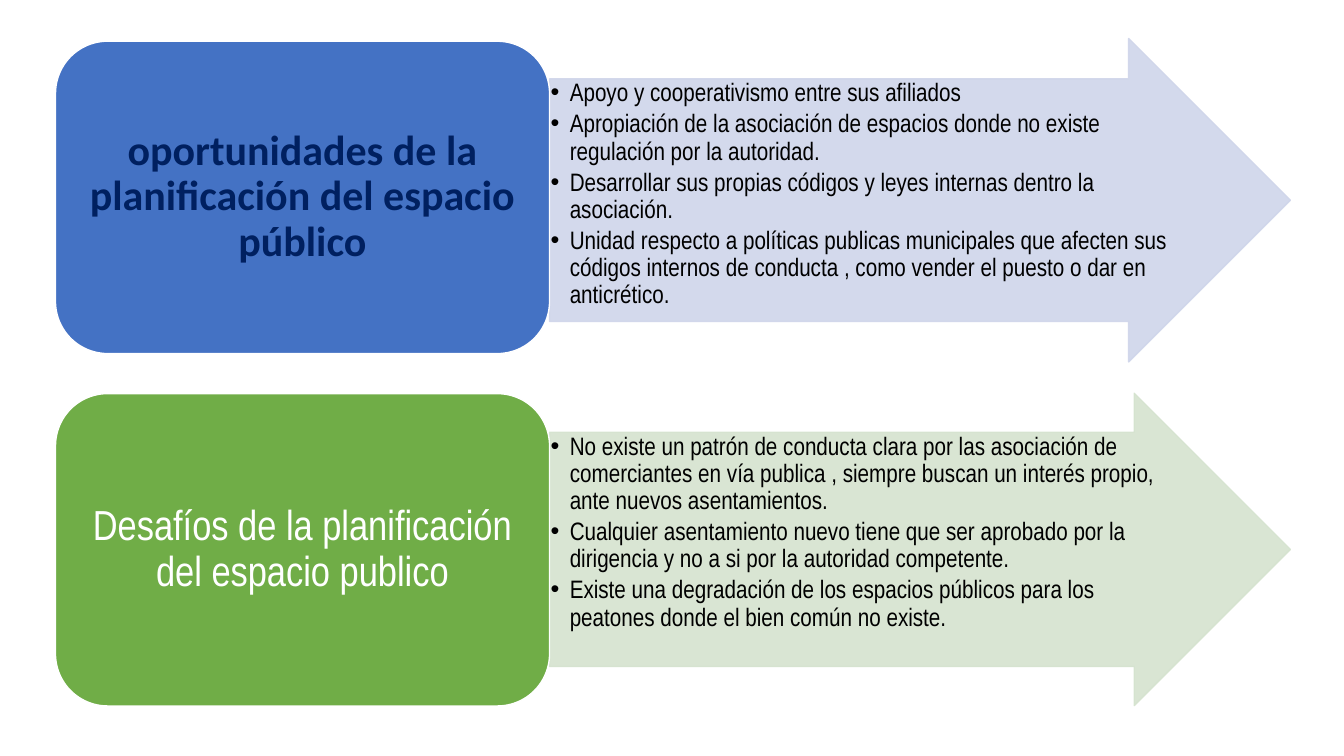
from dataclasses import dataclass

from lxml import etree
from pptx import Presentation
from pptx.dml.color import RGBColor
from pptx.enum.shapes import MSO_SHAPE
from pptx.enum.text import MSO_ANCHOR, PP_ALIGN
from pptx.oxml.ns import qn
from pptx.util import Cm, Pt

ARROW, ROUNDED = MSO_SHAPE.RIGHT_ARROW, MSO_SHAPE.ROUNDED_RECTANGLE
TOP, MIDDLE = MSO_ANCHOR.TOP, MSO_ANCHOR.MIDDLE
LEFT, CENTER = PP_ALIGN.LEFT, PP_ALIGN.CENTER


@dataclass(frozen=True)
class Theme:
    white: str = "FFFFFF"
    black: str = "000000"
    navy: str = "002060"
    blue: str = "4472C4"
    pale_blue: str = "CFD5EA"
    green: str = "70AD47"
    pale_green: str = "D5E3CF"
    narrow: str = "Arial Narrow"
    heading: str = "Calibri"
    title_size: int = 30
    body_size: int = 18
    arrow_opacity: int = 90


class SlideBuilder:
    def __init__(self, page, theme):
        self.page = page
        self.theme = theme

    def shape(self, kind, left, top, width, height, fill, line, opacity=100):
        box = self.page.shapes.add_shape(kind, Cm(left), Cm(top), Cm(width), Cm(height))
        box.shadow.inherit = False
        box.line.width = Pt(1)
        for paint, color in ((box.fill, fill), (box.line.fill, line)):
            paint.solid()
            paint.fore_color.rgb = RGBColor.from_string(color)
        if opacity < 100:
            for color in box._element.spPr.iter(qn("a:srgbClr")):
                etree.SubElement(color, qn("a:alpha"), val=str(opacity * 1000))
        return box

    def set_text(self, box, lines, font, size, color, anchor, align, insets, bold=False):
        frame = box.text_frame
        frame.text = "\n".join(lines)
        frame.word_wrap = True
        frame.vertical_anchor = anchor
        frame.margin_left = frame.margin_right = Cm(insets[0])
        frame.margin_top = frame.margin_bottom = Cm(insets[1])
        for para in frame.paragraphs:
            para.alignment = align
            para.line_spacing = 0.9
            for span in para.runs:
                span.font.name = font
                span.font.size = Pt(size)
                span.font.bold = bold
                span.font.color.rgb = RGBColor.from_string(color)
        return frame

    def title_box(self, left, top, width, height, text, fill, font, color, bold):
        box = self.shape(ROUNDED, left, top, width, height, fill, self.theme.white)
        self.set_text(box, [text], font, self.theme.title_size, color,
                      MIDDLE, CENTER, (0.3, 0.15), bold)

    def bullet_arrow(self, left, top, width, height, points, fill):
        theme = self.theme
        box = self.shape(ARROW, left, top, width, height, fill, fill, theme.arrow_opacity)
        box.adjustments[0] = 0.75
        box.adjustments[1] = 0.5
        frame = self.set_text(box, points, theme.narrow, theme.body_size, theme.black,
                              TOP, LEFT, (0.03, 0.03))
        for para in frame.paragraphs:
            para.space_after = Pt(0.15 * theme.body_size)
            properties = para._p.get_or_add_pPr()
            properties.set("marL", str(Cm(0.48)))
            properties.set("indent", str(-Cm(0.48)))
            etree.SubElement(properties, qn("a:buFont"), typeface="Arial")
            etree.SubElement(properties, qn("a:buChar"), char="•")


def main():
    theme = Theme()
    deck = Presentation()
    deck.slide_width, deck.slide_height = Cm(33.87), Cm(19.05)
    builder = SlideBuilder(deck.slides.add_slide(deck.slide_layouts[6]), theme)

    # Shared columns
    box_left, box_width, box_height = 1.4, 12.45, 7.87
    arrow_left, arrow_width = box_left + box_width, 18.67

    # Each row: title with its style, then arrow with its bullets
    rows = [
        dict(title=dict(top=1.04, fill=theme.blue, font=theme.heading,
                        color=theme.navy, bold=True,
                        text="oportunidades de la planificación del espacio público"),
             arrow=dict(top=0.97, height=8.15, fill=theme.pale_blue, points=[
                 "Apoyo y cooperativismo entre sus afiliados",
                 "Apropiación de la asociación de espacios donde no existe "
                 "regulación por la autoridad.",
                 "Desarrollar sus propias códigos y leyes internas dentro la asociación.",
                 "Unidad respecto a políticas publicas municipales que afecten sus "
                 "códigos internos de conducta , como vender el puesto o dar en "
                 "anticrético.",
             ])),
        dict(title=dict(top=9.92, fill=theme.green, font=theme.narrow,
                        color=theme.white, bold=False,
                        text="Desafíos de la planificación del espacio publico"),
             arrow=dict(top=9.91, height=7.87, fill=theme.pale_green, points=[
                 "No existe un patrón de conducta clara por las asociación de "
                 "comerciantes en vía publica , siempre buscan un interés propio, "
                 "ante nuevos asentamientos.",
                 "Cualquier asentamiento nuevo tiene que ser aprobado por la "
                 "dirigencia y no a si por la autoridad competente.",
                 "Existe una degradación de los espacios públicos para los "
                 "peatones donde el bien común no existe.",
             ])),
    ]
    for row in rows:
        builder.bullet_arrow(left=arrow_left, width=arrow_width, **row["arrow"])
        builder.title_box(left=box_left, width=box_width, height=box_height, **row["title"])

    deck.save("out.pptx")


if __name__ == "__main__":
    main()
